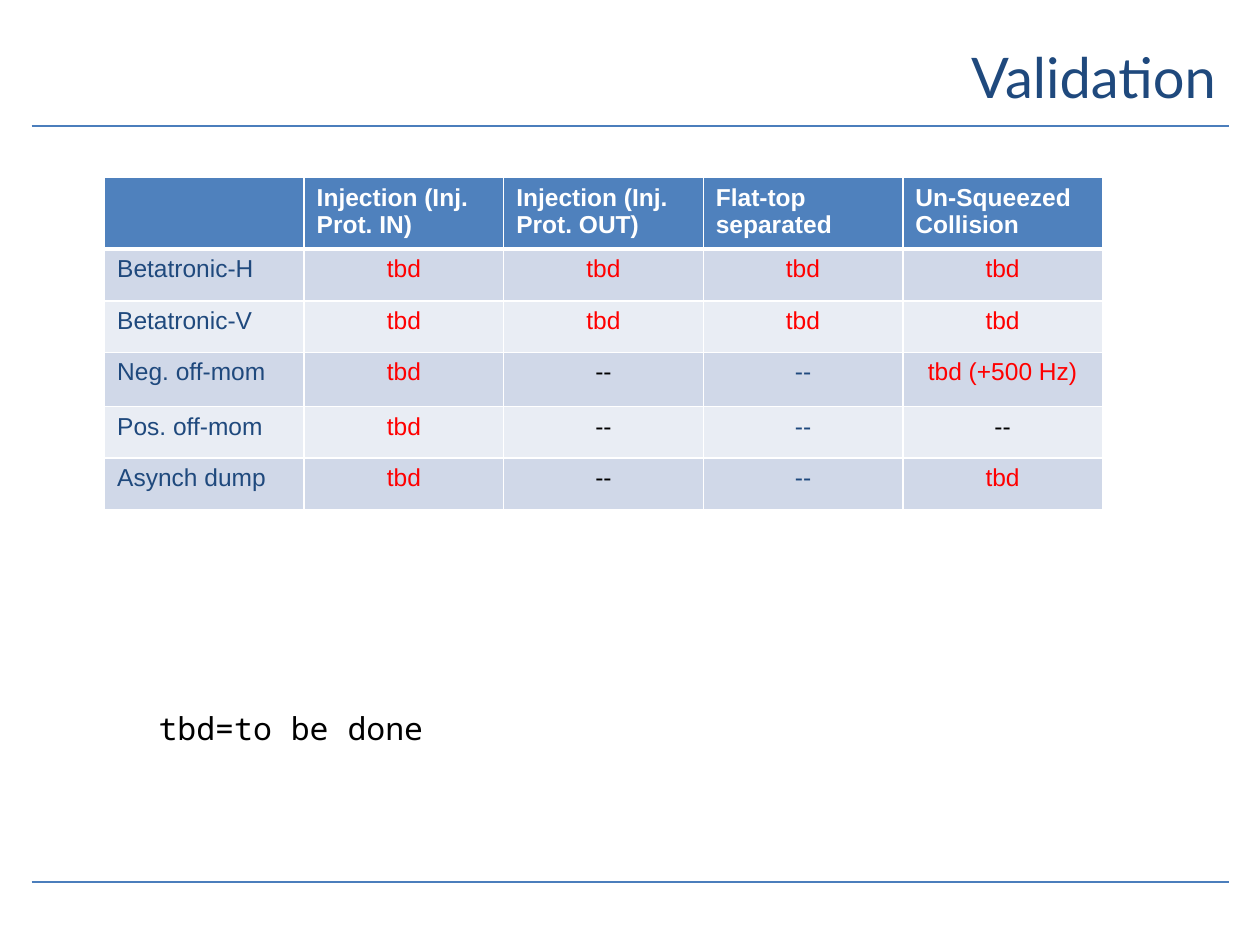
from pptx import Presentation
from pptx import util as u
from pptx.dml.color import RGBColor
from pptx.enum import shapes, text
from pptx.oxml.ns import qn
from lxml import etree

NAVY, RED, BLACK, WHITE = "1F497D", "FF0000", "000000", "FFFFFF"
RULE, HEAD, BANDS = "4B7EBC", "4F81BD", ("D0D8E8", "E9EDF4")

HEADS = ["", "Injection (Inj. Prot. IN)", "Injection (Inj. Prot. OUT)",
         "Flat-top separated", "Un-Squeezed Collision"]
TESTS = [
    ["Betatronic-H", "tbd", "tbd", "tbd", "tbd"],
    ["Betatronic-V", "tbd", "tbd", "tbd", "tbd"],
    ["Neg. off-mom", "tbd", "--", "--", "tbd (+500 Hz)"],
    ["Pos. off-mom", "tbd", "--", "--", "--"],
    ["Asynch dump", "tbd", "--", "--", "tbd"],
]
HEIGHTS = [0.41, 0.41, 0.41, 0.43, 0.41, 0.41]


def rgb(code):
    return RGBColor.from_string(code)


def write(frame, words, size, face, color, align=text.PP_ALIGN.LEFT, bold=False):
    para = frame.paragraphs[0]
    para.alignment = align
    run = para.add_run()
    run.text = words
    font = run.font
    font.size, font.name, font.bold = u.Pt(size), face, bold
    font.color.rgb = rgb(color)


def add_rule(slide, y):
    line = slide.shapes.add_connector(
        shapes.MSO_CONNECTOR.STRAIGHT,
        u.Inches(0.25), u.Inches(y), u.Inches(9.75), u.Inches(y))
    line.line.color.rgb = rgb(RULE)
    line.line.width = u.Pt(1.5)
    etree.SubElement(line._element.spPr, qn("a:effectLst"))


def add_label(slide, box, *style, anchor=text.MSO_ANCHOR.TOP, **more):
    frame = slide.shapes.add_textbox(*map(u.Inches, box)).text_frame
    frame.word_wrap = True
    frame.vertical_anchor = anchor
    write(frame, *style, **more)


def set_edges(cell, **widths):
    # Edge elements must come before the cell fill
    props = cell._tc.get_or_add_tcPr()
    for spot, (side, width) in enumerate(widths.items()):
        edge = etree.Element(qn("a:ln" + side), w=str(u.Pt(width)))
        fill = etree.SubElement(edge, qn("a:solidFill"))
        etree.SubElement(fill, qn("a:srgbClr"), val=WHITE)
        props.insert(spot, edge)


def ink(words, col):
    if col == 0:
        return NAVY
    if words.startswith("tbd"):
        return RED
    return NAVY if HEADS[col].startswith("Flat-top") else BLACK


def fill_cell(cell, words, row, col):
    cell.fill.solid()
    cell.fill.fore_color.rgb = rgb(BANDS[(row - 1) % 2] if row else HEAD)
    set_edges(cell, L=1, R=1, T=3 if row == 1 else 1, B=1 if row else 3)
    if not words:
        return
    if row == 0:
        write(cell.text_frame, words, 14, "Arial", WHITE, bold=True)
    else:
        align = text.PP_ALIGN.CENTER if col else text.PP_ALIGN.LEFT
        write(cell.text_frame, words, 14, "Arial", ink(words, col), align)


def add_grid(slide):
    rows = [HEADS] + TESTS
    box = map(u.Inches, (0.83, 1.41, 7.92, 2.62))
    frame = slide.shapes.add_table(len(rows), len(HEADS), *box)
    grid = frame.table
    for r, (row, high) in enumerate(zip(rows, HEIGHTS)):
        grid.rows[r].height = u.Inches(high)
        for c, words in enumerate(row):
            fill_cell(grid.cell(r, c), words, r, c)
    # Leave room for the header's second line
    frame.height = u.Inches(2.62)


def main():
    deck = Presentation()
    deck.slide_width, deck.slide_height = u.Inches(10), u.Inches(7.5)
    slide = deck.slides.add_slide(deck.slide_layouts[6])

    # Rules above and below the content
    for y in (1, 7):
        add_rule(slide, y)

    # Title
    add_label(slide, (1.75, 0.17, 8, 0.87), "Validation", 32, "Lato", NAVY,
              text.PP_ALIGN.RIGHT, anchor=text.MSO_ANCHOR.MIDDLE)

    # Test status and its key
    add_grid(slide)
    add_label(slide, (1.16, 5.58, 4.88, 0.4), "tbd=to be done", 18,
              "Noto Sans Mono", BLACK)

    deck.save("out.pptx")


if __name__ == "__main__":
    main()
